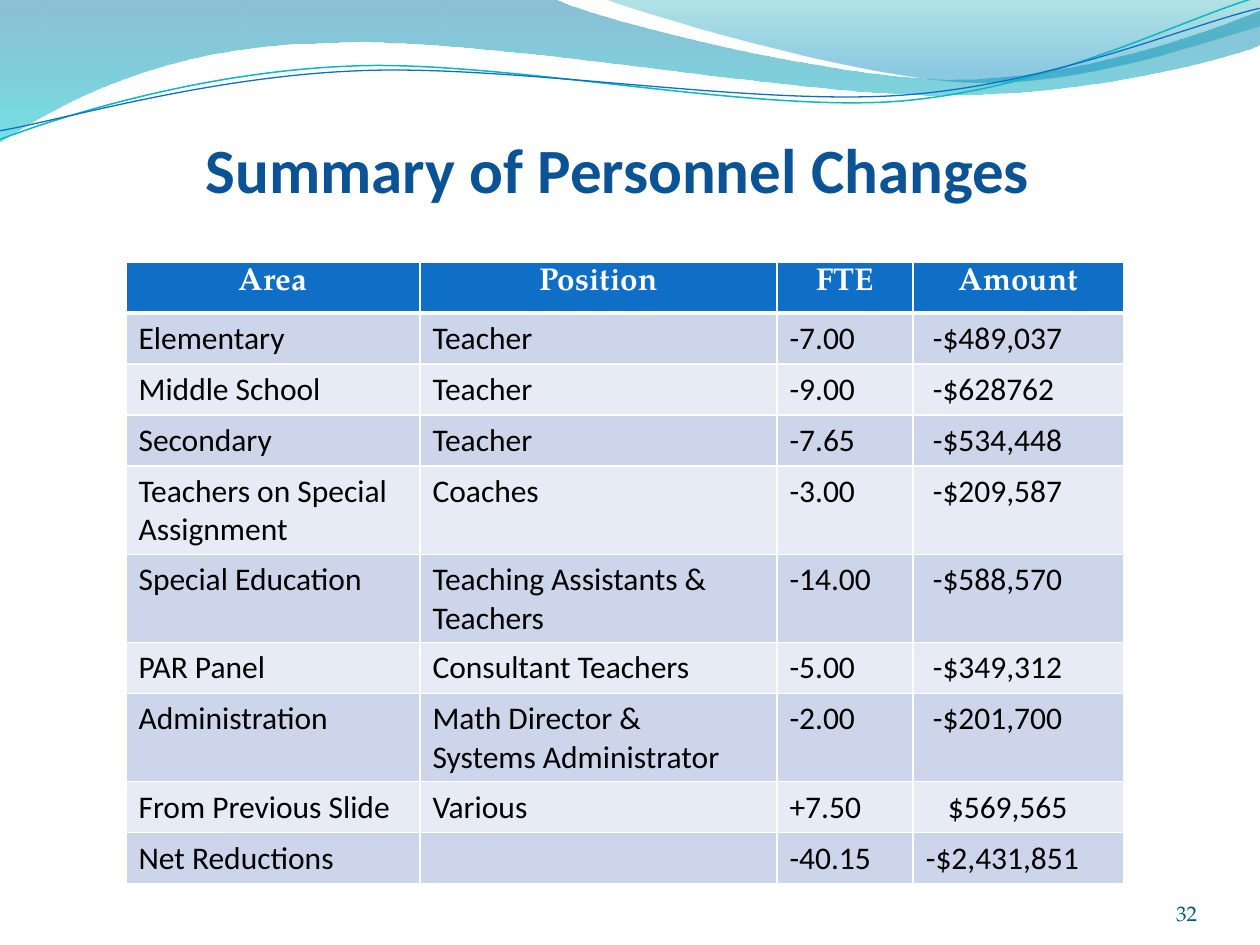
import dataclasses

import lxml.etree
import pptx
import pptx.dml.color
import pptx.enum.text
import pptx.oxml.ns
import pptx.util

ALIGN = pptx.enum.text.PP_ALIGN
ANCHOR = pptx.enum.text.MSO_ANCHOR
qn = pptx.oxml.ns.qn
EMU_PER_PX = 914400 / 126


@dataclasses.dataclass(frozen=True)
class Theme:
    heading: str = "Calibri"
    body: str = "Calibri"
    serif: str = "TeX Gyre Pagella"
    title_size: int = 36
    table_size: int = 18
    number_size: int = 12
    title: str = "0B5394"
    number: str = "045D75"
    text: str = "000000"
    white: str = "FFFFFF"
    blue: str = "0F6FC6"
    teal: str = "0AB8BF"
    bands: tuple = ("CCD5EA", "E7EBF5")
    # Each stop: position, colour, opacity in percent
    main_wave: tuple = ((0, "0074A1", 45), (1, "00C6CF", 55))
    right_wave: tuple = ((0, "00A1A9", 30), (0.8, "008BBF", 45))


THEME = Theme()

# A pair is a corner; a group of six is a curve's two handles and its end.
MAIN_WAVE = [(0, 0), (554, -1), (600, 21, 837, 79, 955, 79),
             (1075, 79, 1207, 33, 1260, 11), (1261, 45),
             (1239, 55, 1096, 96, 940, 95), (784, 95, 481, 35, 324, 43),
             (163, 45, 58, 105, -1, 142), (0, 0)]
RIGHT_WAVE = [(604, -1), (641, 14, 859, 78, 969, 82),
              (1079, 87, 1211, 40, 1260, 26), (1260, 0), (604, -1)]
# The two lines are level here and tilted once drawn.
LINE_TILT = 357.3
TEAL_LINE = [(-3, 110), (58, 90, 200, 52, 350, 53),
             (499, 53, 745, 118, 896, 114), (1049, 109, 1184, 45, 1260, 27)]
BLUE_LINE = [(-2, 101), (57, 94, 207, 57, 357, 58),
             (509, 58, 750, 112, 902, 108), (1052, 104, 1187, 52, 1262, 38)]

COLUMN_WIDTHS = (294, 357, 136, 211)
ROW_HEIGHT = 51
HEADERS = ("Area", "Position", "FTE", "Amount")
ROWS = [
    ("Elementary", "Teacher", "-7.00", "-$489,037"),
    ("Middle School", "Teacher", "-9.00", "-$628762"),
    ("Secondary", "Teacher", "-7.65", "-$534,448"),
    ("Teachers on Special Assignment", "Coaches", "-3.00", "-$209,587"),
    ("Special Education", "Teaching Assistants & Teachers", "-14.00", "-$588,570"),
    ("PAR Panel", "Consultant Teachers", "-5.00", "-$349,312"),
    ("Administration", "Math Director &\nSystems Administrator", "-2.00", "-$201,700"),
    ("From Previous Slide", "Various", "+7.50", "$569,565"),
    ("Net Reductions", "", "-40.15", "-$2,431,851"),
]
CELL_MARGIN = 13
AMOUNT_INDENTS = [7] * 7 + [22, 0]


def px(n):
    return pptx.util.Emu(round(n * EMU_PER_PX))


def rgb(value):
    return pptx.dml.color.RGBColor.from_string(value)


def format_text(tf, font, size, color, bold=False, align=ALIGN.LEFT):
    for p in tf.paragraphs:
        p.alignment = align
        for r in p.runs:
            r.font.name = font
            r.font.size = pptx.util.Pt(size)
            r.font.bold = bold
            r.font.color.rgb = rgb(color)


def set_insets(tf, top=0):
    tf.margin_left = tf.margin_right = tf.margin_bottom = 0
    tf.margin_top = px(top)


def add_outline(shapes, x, y, outline, close):
    """Build a freeform through all points, then bend the groups of six into curves."""
    points = [(px(x + part[i]), px(y + part[i + 1]))
              for part in outline for i in range(0, len(part), 2)]
    builder = shapes.build_freeform(*points[0])
    builder.add_line_segments(points[1:], close=close)
    sp = builder.convert_to_shape()
    sp.shadow.inherit = False
    lines = sp._element.spPr.findall(".//" + qn("a:lnTo"))
    for part in outline[1:]:
        segment, lines = lines[:len(part) // 2], lines[len(part) // 2:]
        if len(segment) == 3:
            curve = lxml.etree.Element(qn("a:cubicBezTo"))
            segment[0].addprevious(curve)
            for line in segment:
                curve.append(line[0])
                line.getparent().remove(line)
    return sp


def add_wave(shapes, x, y, outline, stops):
    sp = add_outline(shapes, x, y, outline, True)
    sp.line.fill.background()
    sp.fill.gradient()
    sp.fill.gradient_angle = 270
    for stop, (position, color, _) in zip(sp.fill.gradient_stops, stops):
        stop.position = position
        stop.color.rgb = rgb(color)
    for clr, (_, _, opacity) in zip(sp._element.spPr.iter(qn("a:srgbClr")), stops):
        lxml.etree.SubElement(clr, qn("a:alpha"), val=str(opacity * 1000))


def add_wave_line(shapes, x, y, outline, color, width):
    sp = add_outline(shapes, x, y, outline, False)
    sp.rotation = LINE_TILT
    sp.fill.background()
    sp.line.color.rgb = rgb(color)
    sp.line.width = pptx.util.Pt(width)


def add_waves(s, x, y):
    add_wave(s.shapes, x, y, MAIN_WAVE, THEME.main_wave)
    add_wave(s.shapes, x, y, RIGHT_WAVE, THEME.right_wave)
    lines = s.shapes.add_group_shape().shapes
    add_wave_line(lines, x, y, TEAL_LINE, THEME.teal, 0.85)
    add_wave_line(lines, x, y, BLUE_LINE, THEME.blue, 0.75)


def place_title(s, x, y, w, h):
    sp = s.shapes.title
    s.shapes._spTree.append(sp._element)
    sp.left, sp.top, sp.width, sp.height = px(x), px(y), px(w), px(h)
    tf = sp.text_frame
    tf.text = "Summary of Personnel Changes "
    tf.auto_size = pptx.enum.text.MSO_AUTO_SIZE.NONE
    tf.vertical_anchor = ANCHOR.BOTTOM
    set_insets(tf, top=6)
    format_text(tf, THEME.heading, THEME.title_size, THEME.title, True, ALIGN.CENTER)


def add_borders(cell, top, bottom):
    tcPr = cell._tc.get_or_add_tcPr()
    for side, width in (("L", 1), ("R", 1), ("T", top), ("B", bottom)):
        ln = lxml.etree.SubElement(tcPr, qn("a:ln" + side), w=str(pptx.util.Pt(width)))
        fill = lxml.etree.SubElement(ln, qn("a:solidFill"))
        lxml.etree.SubElement(fill, qn("a:srgbClr"), val=THEME.white)


def style_cell(cell, text, row):
    header = row == 0
    add_borders(cell, top=3 if row == 1 else 1, bottom=3 if header else 1)
    cell.fill.solid()
    cell.fill.fore_color.rgb = rgb(THEME.blue if header else THEME.bands[(row - 1) % 2])
    cell.text_frame.text = text
    if header:
        format_text(cell.text_frame, THEME.serif, THEME.table_size, THEME.white,
                    True, ALIGN.CENTER)
    else:
        format_text(cell.text_frame, THEME.body, THEME.table_size, THEME.text)
    if not text:
        cell.text_frame.paragraphs[0].font.size = pptx.util.Pt(THEME.table_size)


def add_personnel_table(s, x, y, h):
    rows = [HEADERS] + ROWS
    frame = s.shapes.add_table(len(rows), len(HEADERS), px(x), px(y),
                               px(sum(COLUMN_WIDTHS)), px(h))
    table = frame.table
    table.horz_banding = False
    for column, width in zip(table.columns, COLUMN_WIDTHS):
        column.width = px(width)
    for i, values in enumerate(rows):
        table.rows[i].height = px(ROW_HEIGHT)
        for j, text in enumerate(values):
            style_cell(table.cell(i, j), text, i)
    for i, indent in enumerate(AMOUNT_INDENTS, start=1):
        table.cell(i, 3).margin_left = px(CELL_MARGIN + indent)
    frame.height = px(h)


def add_slide_number(s, x, y, w, h):
    tf = s.shapes.add_textbox(px(x), px(y), px(w), px(h)).text_frame
    tf.word_wrap = True
    tf.vertical_anchor = ANCHOR.BOTTOM
    set_insets(tf)
    tf.text = "32"
    format_text(tf, THEME.serif, THEME.number_size, THEME.number, align=ALIGN.RIGHT)


def main():
    prs = pptx.Presentation()
    prs.slide_width, prs.slide_height = px(1260), px(945)
    s = prs.slides.add_slide(prs.slide_layouts[5])
    add_waves(s, 0, 0)
    place_title(s, 53, 135, 1144, 71)
    add_slide_number(s, 1092, 876, 105, 50)
    add_personnel_table(s, 126, 262, 625)
    prs.save("out.pptx")


if __name__ == "__main__":
    main()
